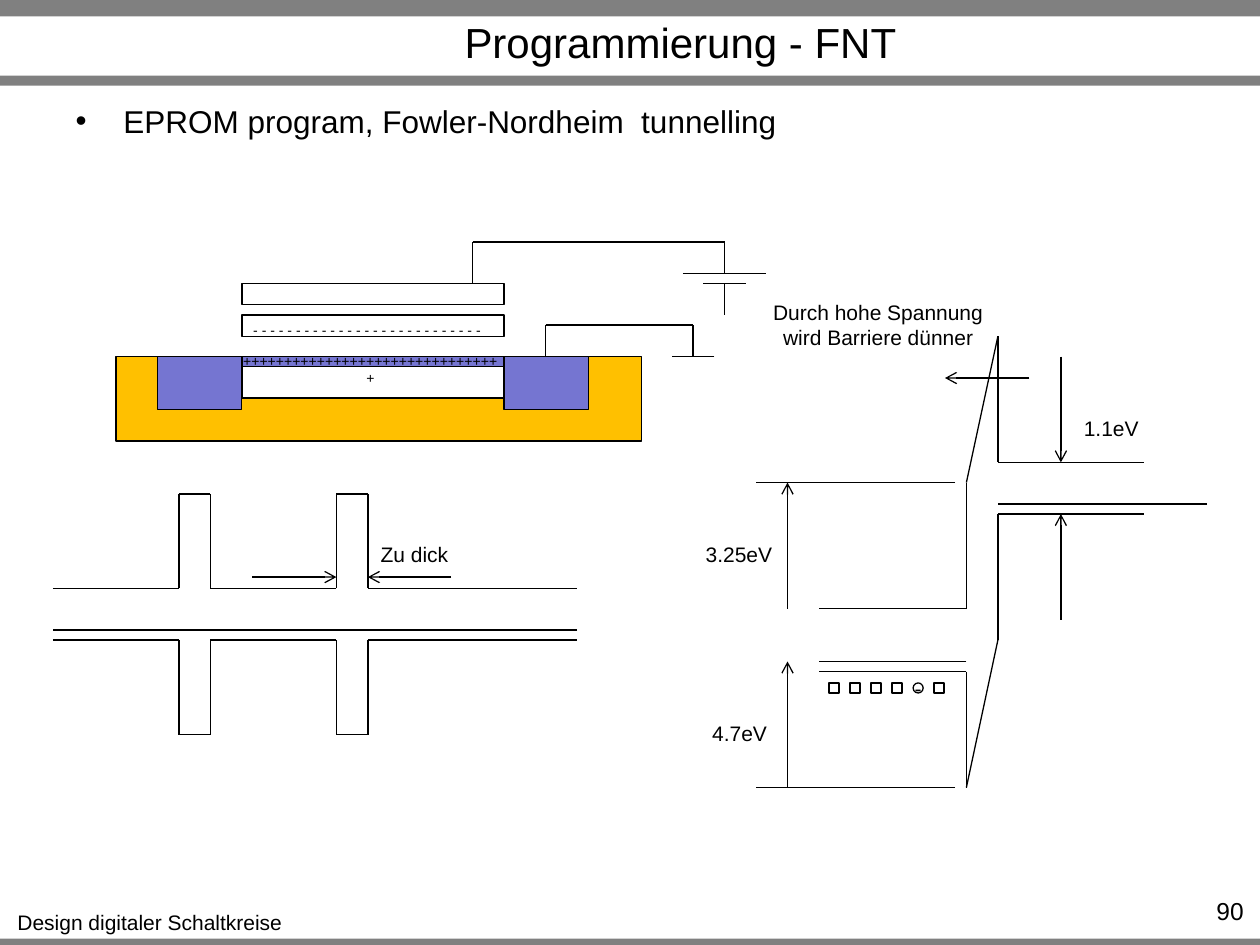
from dataclasses import dataclass
from itertools import pairwise

from lxml import etree
from pptx import Presentation
from pptx import util as u
from pptx.dml.color import RGBColor
from pptx.enum import shapes, text
from pptx.oxml import ns


@dataclass(frozen=True)
class Theme:
    font: str = "Arial"
    ink: str = "000000"
    bar: str = "808080"
    substrate: str = "FFC000"
    doped: str = "7575D1"
    paper: str = "FFFFFF"
    title: int = 24
    body: int = 18
    page: int = 14
    label: int = 12
    charge: int = 8
    line: float = 0.75


LEFT, CENTER, RIGHT = text.PP_ALIGN.LEFT, text.PP_ALIGN.CENTER, text.PP_ALIGN.RIGHT
RECT, OVAL = shapes.MSO_SHAPE.RECTANGLE, shapes.MSO_SHAPE.OVAL


class Sketch:
    """Draws themed elements on one slide; all lengths are in inches."""

    def __init__(self, slide, theme):
        self.slide, self.theme = slide, theme

    def place(self, shape, left, top, width, height):
        shape.left, shape.top = u.Inches(left), u.Inches(top)
        shape.width, shape.height = u.Inches(width), u.Inches(height)

    def add_words(self, frame, words, size, align=CENTER):
        para = frame.paragraphs[0]
        para.alignment = align
        para.space_before = u.Pt(0)
        span = para.add_run()
        span.text = words
        span.font.name = self.theme.font
        span.font.size = u.Pt(size)
        span.font.color.rgb = RGBColor.from_string(self.theme.ink)
        return para

    def title(self, words, *area):
        box = self.slide.shapes.title
        self.place(box, *area)
        box.text_frame.vertical_anchor = text.MSO_ANCHOR.MIDDLE
        self.add_words(box.text_frame, words, self.theme.title)

    def bullet(self, words, *area):
        box = self.slide.placeholders[1]
        self.place(box, *area)
        para = self.add_words(box.text_frame, words, self.theme.body, LEFT)
        props = para._p.get_or_add_pPr()
        props.set("marL", str(u.Inches(0.38)))
        props.set("indent", str(u.Inches(-0.38)))
        etree.SubElement(props, ns.qn("a:buChar"), char="•")

    def label(self, words, left, top, width, height, size=None, align=CENTER, wrap=False):
        box = self.slide.shapes.add_textbox(*map(u.Inches, (left, top, width, height)))
        box.text_frame.word_wrap = wrap
        self.add_words(box.text_frame, words, size or self.theme.label, align)

    def block(self, left, top, width, height, fill=None, kind=RECT, outlined=True):
        shape = self.slide.shapes.add_shape(kind, *map(u.Inches, (left, top, width, height)))
        shape.shadow.inherit = False
        if fill:
            shape.fill.solid()
            shape.fill.fore_color.rgb = RGBColor.from_string(fill)
        else:
            shape.fill.background()
        if outlined:
            shape.line.color.rgb = RGBColor.from_string(self.theme.ink)
            shape.line.width = u.Pt(self.theme.line)
        else:
            shape.line.fill.background()
        return shape

    def line(self, start, end, arrow=False):
        wire = self.slide.shapes.add_connector(
            shapes.MSO_CONNECTOR.STRAIGHT, *map(u.Inches, (*start, *end)))
        wire.line.color.rgb = RGBColor.from_string(self.theme.ink)
        wire.line.width = u.Pt(self.theme.line)
        if arrow:
            etree.SubElement(wire.line._get_or_add_ln(), ns.qn("a:tailEnd"), type="arrow")
        etree.SubElement(wire._element.spPr, ns.qn("a:effectLst"))

    def chain(self, *points):
        for start, end in pairwise(points):
            self.line(start, end)


def draw_frame(sketch):
    theme = sketch.theme
    for top, height in ((7.45, 0.05), (0, 0.13), (0.6, 0.08)):
        sketch.block(0, top, 10, height, theme.bar, outlined=False)
    sketch.label("Design digitaler Schaltkreise", 0.03, 7.17, 2.32, 0.3)
    sketch.title("Programmierung - FNT", 1.3, 0.14, 8.2, 0.38)
    sketch.bullet("EPROM program, Fowler-Nordheim  tunnelling", 0.5, 0.76, 9, 0.66)
    sketch.label("90", 9.1, 7.06, 0.87, 0.24, theme.page, RIGHT, wrap=True)


def draw_transistor(sketch):
    theme = sketch.theme
    gate, span, surface = 1.92, 2.08, 2.83
    # Substrate, source and drain, channel
    sketch.block(0.92, surface, 4.17, 0.67, theme.substrate)
    sketch.line((1.25, surface), (4.67, surface))
    for left in (1.25, 4):
        sketch.block(left, surface, 0.67, 0.42, theme.doped)
    sketch.block(gate, surface, span, 0.33, theme.paper)
    sketch.block(gate, surface, span, 0.08, theme.doped)
    # Control gate and floating gate
    for top in (2.25, 2.5):
        sketch.block(gate, top, span, 0.17)
    # Charges
    sketch.label("+" * 32, 1.83, 2.75, 2.22, 0.24, theme.charge, wrap=True)
    sketch.label(" ".join("-" * 27), 1.83, 2.5, 2.17, 0.24, theme.charge, wrap=True)
    # Gate supply
    sketch.chain((3.75, 2.25), (3.75, 1.92), (5.75, 1.92), (5.75, 2.17))
    sketch.line((5.42, 2.17), (6.08, 2.17))
    sketch.line((5.58, 2.25), (5.92, 2.25))
    sketch.line((5.75, 2.25), (5.75, 2.5))
    # Drain to ground
    sketch.chain((4.33, 2.83), (4.33, 2.58), (5.5, 2.58), (5.5, 2.83))
    sketch.line((5.67, 2.83), (5.33, 2.83))


def draw_thick_barriers(sketch):
    # Conduction and valence band edges, each with two barriers
    for band, peak in ((4.67, 3.92), (5.08, 5.83)):
        points = [(0.42, band)]
        for left in (1.42, 2.67):
            right = left + 0.25
            points += [(left, band), (left, peak), (right, peak), (right, band)]
        sketch.chain(*points, (4.58, band))
    sketch.line((4.58, 5), (0.42, 5))
    # Barrier width
    sketch.line((2, 4.58), (2.67, 4.58), arrow=True)
    sketch.line((3.58, 4.58), (2.92, 4.58), arrow=True)
    sketch.label("Zu dick", 2.92, 4.25, 0.74, 0.3)


def draw_thin_barrier(sketch):
    # Tilted band edges, from the channel over the oxide to the gate
    sketch.chain((6.5, 4.83), (7.67, 4.83), (7.67, 3.83), (7.92, 2.67), (7.92, 3.67), (9.08, 3.67))
    sketch.chain((6.5, 5.33), (7.67, 5.33), (7.67, 6.25), (7.92, 5.08), (7.92, 4.08), (9.08, 4.08))
    # Fermi levels and reference levels
    sketch.line((7.67, 5.25), (6.5, 5.25))
    sketch.line((9.58, 4), (7.92, 4))
    for level in (3.83, 6.25):
        sketch.line((7.58, level), (6, level))
    # Carriers
    for slot in range(6):
        electron = slot == 4
        carrier = sketch.block(6.58 + slot / 6, 5.42, 0.08, 0.08, kind=OVAL if electron else RECT)
        if electron:
            frame = carrier.text_frame
            frame.margin_left = frame.margin_right = frame.margin_top = frame.margin_bottom = 0
            frame.word_wrap = False
            frame.vertical_anchor = text.MSO_ANCHOR.MIDDLE
            sketch.add_words(frame, "-", sketch.theme.label)
    # Energy arrows
    for x, start, end in ((6.25, 4.83, 3.83), (6.25, 6.25, 5.25), (8.42, 2.83, 3.67), (8.42, 4.92, 4.08)):
        sketch.line((x, start), (x, end), arrow=True)
    sketch.line((8.17, 3), (7.5, 3), arrow=True)
    # Labels
    sketch.label("3.25eV", 5.5, 4.25, 0.73, 0.3)
    sketch.label("4.7eV", 5.55, 5.67, 0.64, 0.3)
    sketch.label("1.1eV", 8.5, 3.25, 0.64, 0.3)
    sketch.label("Durch hohe Spannung wird Barriere dünner", 6, 2.33, 1.94, 0.5, wrap=True)


def main():
    deck = Presentation()
    deck.slide_width, deck.slide_height = u.Inches(10), u.Inches(7.5)
    sketch = Sketch(deck.slides.add_slide(deck.slide_layouts[1]), Theme())
    draw_frame(sketch)
    draw_transistor(sketch)
    draw_thick_barriers(sketch)
    draw_thin_barrier(sketch)
    deck.save("out.pptx")


if __name__ == "__main__":
    main()
